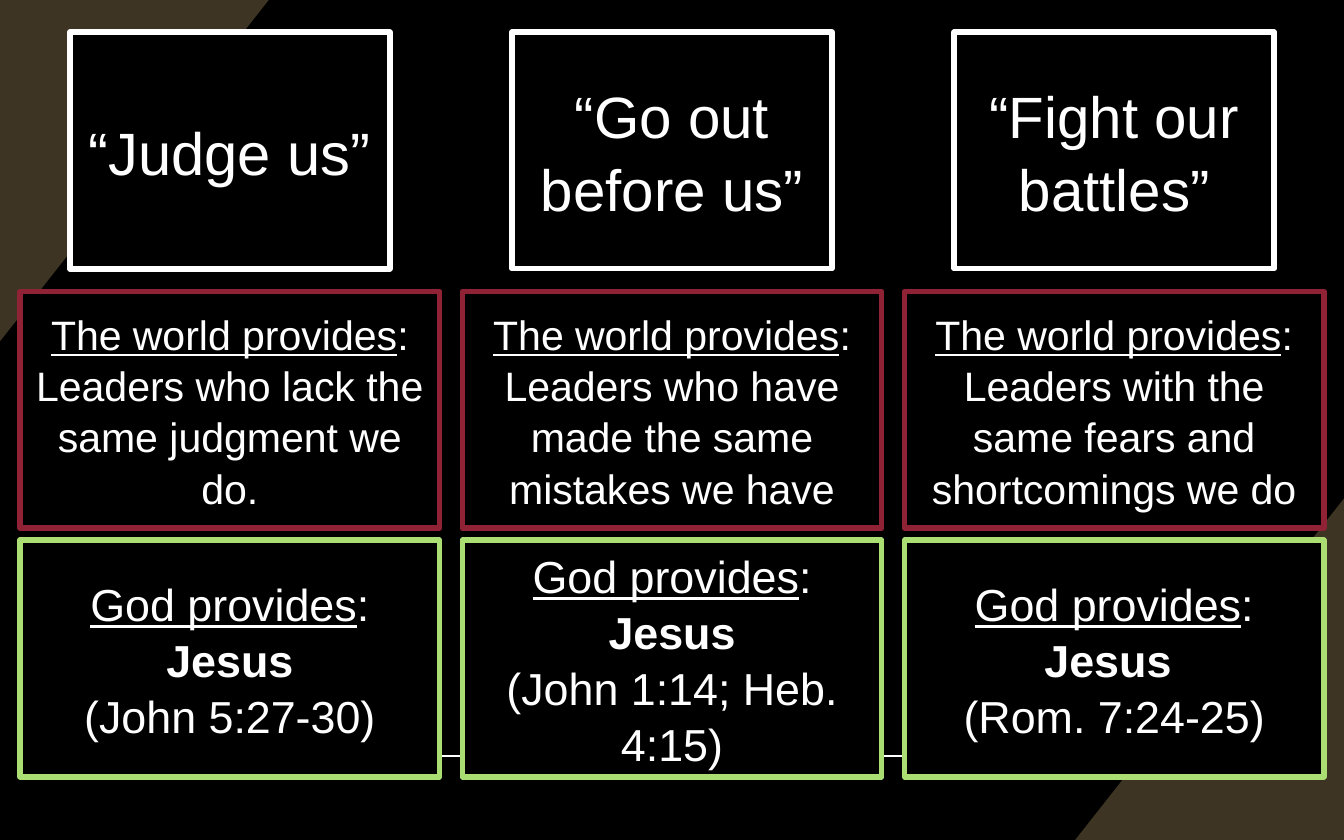
from dataclasses import dataclass
from lxml import etree
from pptx import Presentation
from pptx.dml.color import RGBColor
from pptx.enum.shapes import MSO_CONNECTOR, MSO_SHAPE
from pptx.enum.text import MSO_ANCHOR, MSO_AUTO_SIZE, PP_ALIGN
from pptx.oxml.ns import qn
from pptx.util import Inches, Pt

RECT = MSO_SHAPE.RECTANGLE
LINE = MSO_CONNECTOR.STRAIGHT
MID = MSO_ANCHOR.MIDDLE
FIXED = MSO_AUTO_SIZE.NONE
CENTER = PP_ALIGN.CENTER
WIDE, HIGH = 10, 6.25


@dataclass(frozen=True)
class Theme:
    font: str = "Arial"
    black: str = "000000"
    white: str = "FFFFFF"
    brown: str = "3E3423"
    red: str = "8F2235"
    green: str = "AADE73"
    title: float = 32
    head: float = 31.2
    world: float = 22
    god: float = 24
    edge: float = 3
    lead: float = 1.04


T = Theme()
LEFT, STEP, CELL = 0.15, 3.29, 3.12
INSET, TALL = 0.37, 1.76
ROWS = (0.24, 2.17, 4.02)

COLS = [
    ("“Judge us”", "Leaders who lack the same judgment we do.",
     "Jesus", "(John 5:27-30)"),
    ("“Go out before us”", "Leaders who have made the same mistakes we have",
     "Jesus", "(John 1:14; Heb. 4:15)"),
    ("“Fight our battles”", "Leaders with the same fears and shortcomings we do",
     "Jesus ", "(Rom. 7:24-25)"),
]


def color(code):
    return RGBColor.from_string(code)


def paint(fill, code):
    fill.solid()
    fill.fore_color.rgb = color(code)


def corner(slide, points):
    build = slide.shapes.build_freeform(
        Inches(points[0][0]), Inches(points[0][1]))
    build.add_line_segments(
        [(Inches(x), Inches(y)) for x, y in points[1:]], close=True)
    shape = build.convert_to_shape()
    shape.shadow.inherit = False
    paint(shape.fill, T.brown)
    shape.line.fill.background()


def decor(slide):
    paint(slide.background.fill, T.black)
    across, down = 0.2 * WIDE, 2.54
    corner(slide, [(0, 0), (across, 0), (0, down)])
    corner(slide, [(WIDE, HIGH), (WIDE - across, HIGH), (WIDE, HIGH - down)])
    y = Inches(0.9 * HIGH)
    rule = slide.shapes.add_connector(LINE, Inches(1.01), y, Inches(9.02), y)
    rule.line.width = Pt(1)
    rule.line.color.rgb = color(T.white)
    etree.SubElement(rule.element.spPr, qn("a:effectLst"))


def frame(shape, edge, filled=True):
    if filled:
        paint(shape.fill, T.black)
    else:
        shape.fill.background()
    shape.line.color.rgb = color(edge)
    shape.line.width = Pt(T.edge)


def write(shape, lines, size):
    body = shape.text_frame
    body.text = "\n".join(lines)
    body.word_wrap = True
    body.auto_size = FIXED
    body.vertical_anchor = MID
    for para in body.paragraphs:
        para.alignment = CENTER
        para.line_spacing = T.lead
        para.space_before = Pt(0)
        for run in para.runs:
            style(run, size)


def style(run, size):
    run.font.name = T.font
    run.font.size = Pt(size)
    run.font.color.rgb = color(T.white)


def box(slide, area, edge, filled=True):
    shape = slide.shapes.add_shape(RECT, *map(Inches, area))
    shape.shadow.inherit = False
    frame(shape, edge, filled)
    return shape


def title(slide, area, text):
    shape = slide.shapes.title
    slide.shapes.element.append(shape.element)
    shape.left, shape.top, shape.width, shape.height = map(Inches, area)
    frame(shape, T.white)
    write(shape, [text], T.title)


def header(slide, area, text):
    write(box(slide, area, T.white, False), [text], T.head)


def panel(slide, area, edge, label, lines, size):
    shape = box(slide, area, edge)
    write(shape, [label, *lines], size)
    paras = shape.text_frame.paragraphs
    paras[0].runs[0].font.underline = True
    colon = paras[0].add_run()
    colon.text = ":"
    style(colon, size)
    return paras


def column(slide, index, texts):
    head, world, name, verse = texts
    x = LEFT + index * STEP
    top = (x + INSET, ROWS[0], CELL - 2 * INSET, TALL)
    place = header if index else title
    place(slide, top, head)
    panel(slide, (x, ROWS[1], CELL, TALL), T.red,
          "The world provides", [world], T.world)
    paras = panel(slide, (x, ROWS[2], CELL, TALL), T.green,
                  "God provides", [name, verse], T.god)
    paras[1].runs[0].font.bold = True


def main():
    deck = Presentation()
    deck.slide_width, deck.slide_height = Inches(WIDE), Inches(HIGH)
    slide = deck.slides.add_slide(deck.slide_layouts[5])
    decor(slide)
    for index, texts in enumerate(COLS):
        column(slide, index, texts)
    deck.save("out.pptx")


if __name__ == "__main__":
    main()
